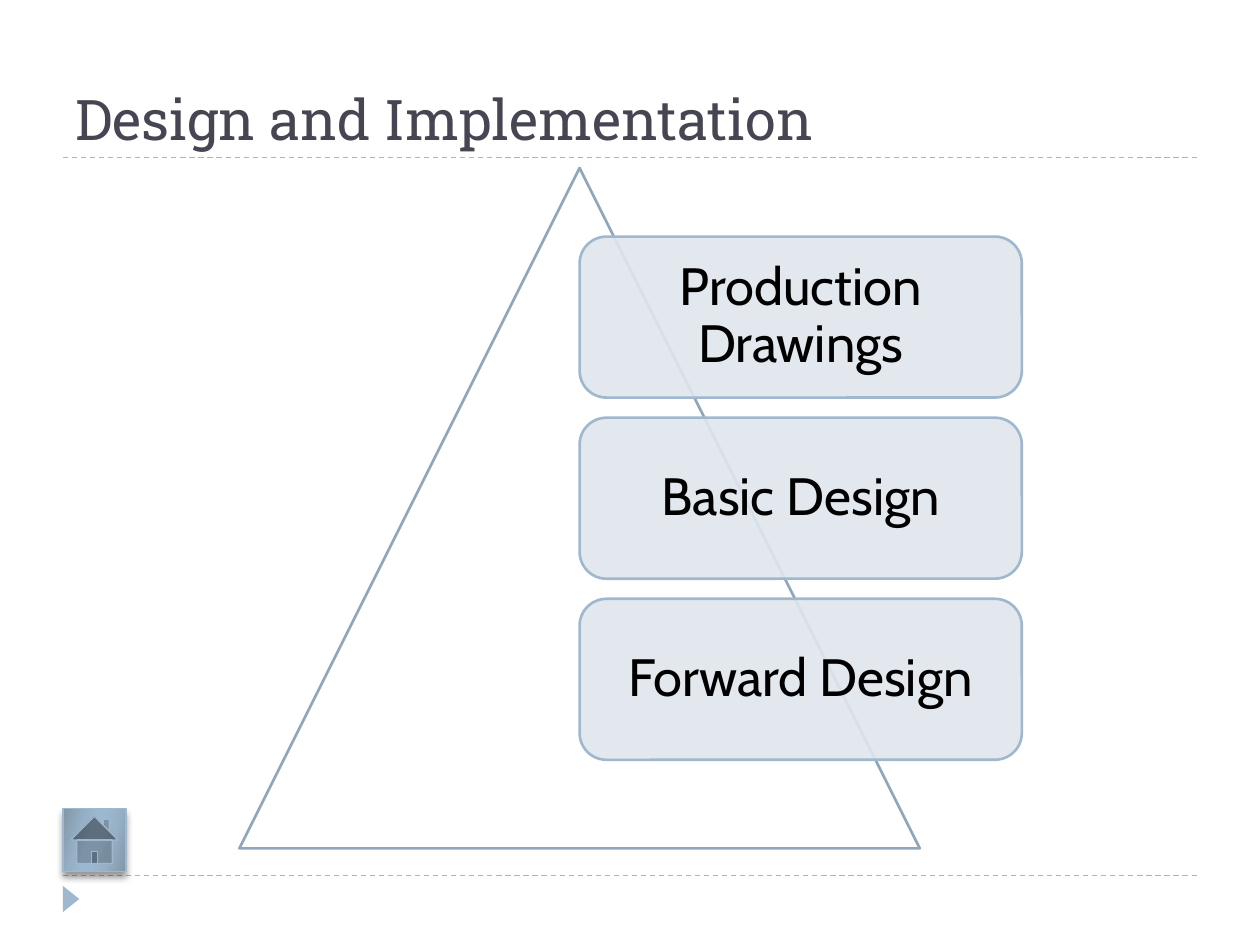
import lxml.etree
import pptx
import pptx.dml.color
import pptx.enum.dml
import pptx.enum.shapes
import pptx.enum.text
import pptx.oxml
import pptx.oxml.ns
import pptx.util

Pt = pptx.util.Pt
RGBColor = pptx.dml.color.RGBColor
MSO_SHAPE = pptx.enum.shapes.MSO_SHAPE
MSO_ANCHOR = pptx.enum.text.MSO_ANCHOR
qn = pptx.oxml.ns.qn

TITLE_COLOR = RGBColor(0x46, 0x46, 0x53)
ACCENT = RGBColor(0x9F, 0xB8, 0xCD)
PYRAMID_LINE = RGBColor(0x90, 0xA7, 0xBA)
STEP_FILL = RGBColor(0xDF, 0xE6, 0xED)
WHITE = RGBColor(0xFF, 0xFF, 0xFF)
BLACK = RGBColor(0, 0, 0)
BUTTON_EDGE = RGBColor(0x82, 0x97, 0xA8)
BUTTON_MIDDLE = RGBColor(0x96, 0xB0, 0xC6)
BUTTON_CENTER = RGBColor(0x9B, 0xB8, 0xD1)
BUTTON_STOPS = [
    (0, BUTTON_EDGE), (30, BUTTON_MIDDLE), (45, BUTTON_CENTER),
    (55, BUTTON_CENTER), (73, BUTTON_MIDDLE), (100, BUTTON_EDGE),
]

MARGIN = 36
CONTENT_WIDTH = 648
STEPS = ["Production Drawings", "Basic Design", "Forward Design"]
STEP_HEIGHT = 92
STEP_PITCH = STEP_HEIGHT * 9 / 8


def add_shape(slide, kind, left, top, width, height, fill, line=None, line_width=1.5):
    shape = slide.shapes.add_shape(kind, Pt(left), Pt(top), Pt(width), Pt(height))
    shape.shadow.inherit = False
    shape.fill.solid()
    shape.fill.fore_color.rgb = fill
    if line is None:
        shape.line.fill.background()
    else:
        shape.line.color.rgb = line
        shape.line.width = Pt(line_width)
    return shape


def add_rule(slide, top):
    """Dashed line across the content width."""
    rule = slide.shapes.add_connector(
        pptx.enum.shapes.MSO_CONNECTOR.STRAIGHT,
        Pt(MARGIN), Pt(top), Pt(MARGIN + CONTENT_WIDTH), Pt(top))
    rule.line.color.rgb = ACCENT
    rule.line.width = Pt(0.75)
    rule.line.dash_style = pptx.enum.dml.MSO_LINE.DASH
    lxml.etree.SubElement(rule.element.spPr, qn("a:effectLst"))


def write_text(shape, text, font_name, size, color, anchor):
    frame = shape.text_frame
    frame.word_wrap = True
    frame.vertical_anchor = anchor
    paragraph = frame.paragraphs[0]
    paragraph.text = text
    paragraph.font.name = font_name
    paragraph.font.size = Pt(size)
    paragraph.font.color.rgb = color
    return paragraph


def add_title(slide, text):
    box = slide.shapes.add_textbox(Pt(MARGIN), Pt(12), Pt(CONTENT_WIDTH), Pt(78))
    write_text(box, text, "Roboto Slab", 32, TITLE_COLOR, MSO_ANCHOR.BOTTOM)


def add_step(slide, text, top):
    step = add_shape(slide, MSO_SHAPE.ROUNDED_RECTANGLE, 331.2, top, 252.7,
                     STEP_HEIGHT, STEP_FILL, ACCENT)
    color = step.element.spPr.find(qn("a:solidFill"))[0]
    lxml.etree.SubElement(color, qn("a:alpha"), val="90000")
    frame = step.text_frame
    frame.margin_left = frame.margin_right = Pt(8.6)
    frame.margin_top = frame.margin_bottom = Pt(8.6)
    paragraph = write_text(step, text, "Cabin", 30, BLACK, MSO_ANCHOR.MIDDLE)
    paragraph.alignment = pptx.enum.text.PP_ALIGN.CENTER
    paragraph.line_spacing = 0.9


def set_gradient(shape, stops, angle):
    shape.fill.gradient()
    gradient = shape.element.spPr.find(qn("a:gradFill"))
    stop_list = gradient.find(qn("a:gsLst"))
    for old_stop in list(stop_list):
        stop_list.remove(old_stop)
    for position, color in stops:
        stop = lxml.etree.SubElement(stop_list, qn("a:gs"), pos=str(position * 1000))
        lxml.etree.SubElement(stop, qn("a:srgbClr"), val=str(color))
    gradient.find(qn("a:lin")).set("ang", str(angle * 60000))


def add_drop_shadow(shape, blur, distance, opacity):
    effects = shape.element.spPr.find(qn("a:effectLst"))
    shadow = lxml.etree.SubElement(
        effects, qn("a:outerShdw"), blurRad=str(Pt(blur)), dist=str(Pt(distance)),
        dir=str(90 * 60000), rotWithShape="0")
    color = lxml.etree.SubElement(shadow, qn("a:srgbClr"), val=str(BLACK))
    lxml.etree.SubElement(color, qn("a:alpha"), val=str(opacity * 1000))


def add_home_button(slide):
    button = add_shape(slide, MSO_SHAPE.ACTION_BUTTON_HOME, MARGIN, 462, 36, 36,
                       BUTTON_CENTER, ACCENT, 0.75)
    set_gradient(button, BUTTON_STOPS, 16)
    add_drop_shadow(button, blur=4, distance=3.4, opacity=40)


def main():
    presentation = pptx.Presentation()
    presentation.slide_width = Pt(720)
    presentation.slide_height = Pt(540)
    slide = presentation.slides.add_slide(presentation.slide_layouts[6])

    add_rule(slide, 500.4)
    add_rule(slide, 90)
    marker = add_shape(slide, MSO_SHAPE.ISOSCELES_TRIANGLE, 33.1, 509, 15, 9.4, ACCENT)
    marker.rotation = 90
    add_title(slide, "Design and Implementation")

    add_shape(slide, MSO_SHAPE.ISOSCELES_TRIANGLE, 136.8, 96, 388.8, 388.8,
              WHITE, PYRAMID_LINE)
    for index, text in enumerate(STEPS):
        add_step(slide, text, 135.2 + index * STEP_PITCH)
    add_home_button(slide)

    presentation.save("out.pptx")


if __name__ == "__main__":
    main()
